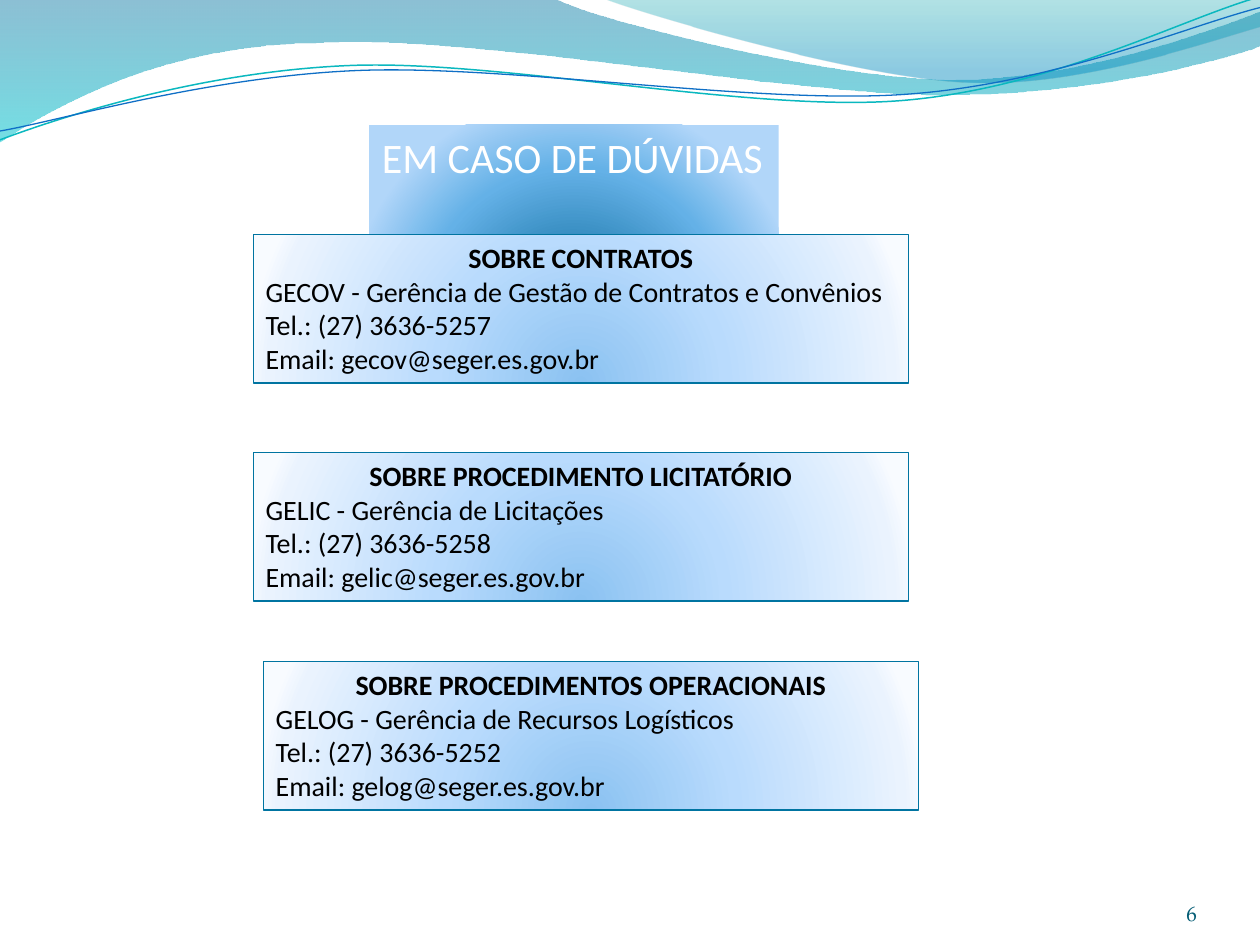
import math
from dataclasses import dataclass

import pptx
import pptx.dml.color
import pptx.enum.shapes
import pptx.enum.text
import pptx.oxml
import pptx.oxml.ns
import pptx.util

RGBColor = pptx.dml.color.RGBColor
Align = pptx.enum.text.PP_ALIGN
Anchor = pptx.enum.text.MSO_ANCHOR

WHITE = RGBColor(0xFF, 0xFF, 0xFF)
BLACK = RGBColor(0x00, 0x00, 0x00)
DEEP_BLUE = RGBColor(0x00, 0x74, 0xA1)
TURQUOISE = RGBColor(0x00, 0xC6, 0xCF)
TEAL = RGBColor(0x00, 0xA1, 0xA9)
OCEAN = RGBColor(0x00, 0x8B, 0xBF)
LINE_TEAL = RGBColor(0x0A, 0xB8, 0xBF)
LINE_BLUE = RGBColor(0x0F, 0x6F, 0xC6)
NUMBER_COLOR = RGBColor(0x04, 0x5D, 0x75)

SLIDE_WIDTH = pptx.util.Inches(10)
SLIDE_HEIGHT = pptx.util.Inches(7.5)
COLUMN = SLIDE_WIDTH / 100
ROW = SLIDE_HEIGHT / 75
LINE_ROTATION = -2.7
FIRST_WAVE_ID = 101


@dataclass(frozen=True)
class Stop:
    position: int
    color: RGBColor
    opacity: int = 100


@dataclass(frozen=True)
class Box:
    column: float
    row: float
    columns: float
    rows: float

    def place(self) -> tuple[int, int, int, int]:
        return (round(self.column * COLUMN), round(self.row * ROW),
                round(self.columns * COLUMN), round(self.rows * ROW))


@dataclass(frozen=True)
class Wave:
    start: tuple[float, float]
    segments: list[tuple[float, ...]]
    stops: tuple[Stop, ...] = ()
    line: RGBColor | None = None
    width: float = 0
    rotation: float = 0
    pivot: tuple[float, float] = (50, 5.8)


@dataclass(frozen=True)
class Contact:
    column: float
    row: float
    heading: str
    department: str
    phone: str
    email: str
    justified_lines: int = 1


TITLE_STOPS = (Stop(0, RGBColor(0x00, 0x60, 0x91)), Stop(68, RGBColor(0x64, 0xB1, 0xE7)),
               Stop(100, RGBColor(0xB1, 0xD6, 0xF9)))
CARD_STOPS = (Stop(0, RGBColor(0x8B, 0xC2, 0xF1)), Stop(43, RGBColor(0xB9, 0xDB, 0xFD)),
              Stop(93, RGBColor(0xEA, 0xF3, 0xFE)), Stop(100, RGBColor(0xF8, 0xFB, 0xFF)))
LINEAR = '<a:lin ang="5400000" scaled="1"/>'
RADIAL = ('<a:path path="circle"><a:fillToRect l="50000" t="130000" r="50000" b="-30000"/>'
          '</a:path>')

WAVES = [
    Wave((0, -0.1), [(44, -0.1), (47.6, 1.7, 66.4, 6.3, 75.8, 6.3),
                     (85.3, 6.3, 95.8, 2.6, 100, 0.9), (100.1, 3.6),
                     (98.3, 4.4, 87, 7.6, 74.6, 7.5), (62.2, 7.5, 38.2, 2.8, 25.7, 3.4),
                     (12.9, 3.5, 4.6, 8.3, -0.1, 11.3)],
         stops=(Stop(0, DEEP_BLUE, 45), Stop(100, TURQUOISE, 55))),
    Wave((47.9, -0.1), [(50.9, 1.1, 68.2, 6.2, 76.9, 6.5),
                        (85.6, 6.9, 96.1, 3.2, 100, 2.1), (100, 0)],
         stops=(Stop(0, TEAL, 30), Stop(80, OCEAN, 45))),
    Wave((0, 11.1), [(4.8, 9.3, 15.8, 5.7, 27.7, 5.2), (39.5, 4.7, 59.3, 8.9, 71.3, 8),
                     (83.3, 7.1, 93.8, 1.5, 99.8, -0.2)],
         line=LINE_TEAL, width=0.85, rotation=LINE_ROTATION, pivot=(49.9, 5.75)),
    Wave((0, 10.4), [(4.7, 9.6, 16.4, 6.1, 28.3, 5.6), (40.3, 5.1, 59.7, 8.3, 71.7, 7.5),
                     (83.6, 6.7, 94.1, 2.1, 100, 0.6)],
         line=LINE_BLUE, width=0.75, rotation=LINE_ROTATION, pivot=(49.95, 5.9)),
]

CONTACTS = [
    Contact(20.1, 18.6, "SOBRE CONTRATOS",
            "GECOV - Gerência de Gestão de Contratos e Convênios",
            "(27) 3636-5257", "gecov@seger.es.gov.br"),
    Contact(20.1, 35.9, "SOBRE PROCEDIMENTO LICITATÓRIO", "GELIC - Gerência de Licitações",
            "(27) 3636-5258", "gelic@seger.es.gov.br", justified_lines=3),
    Contact(20.9, 52.5, "SOBRE PROCEDIMENTOS OPERACIONAIS",
            "GELOG - Gerência de Recursos Logísticos",
            "(27) 3636-5252", "gelog@seger.es.gov.br"),
]


def set_gradient(shape, stops: tuple[Stop, ...], direction: str) -> None:
    shape.fill.solid()
    marks = ""
    for stop in stops:
        alpha = f'<a:alpha val="{stop.opacity * 1000}"/>' if stop.opacity < 100 else ""
        marks += (f'<a:gs pos="{stop.position * 1000}">'
                  f'<a:srgbClr val="{stop.color}">{alpha}</a:srgbClr></a:gs>')
    gradient = pptx.oxml.parse_xml(
        f'<a:gradFill {pptx.oxml.ns.nsdecls("a")} rotWithShape="1">'
        f'<a:gsLst>{marks}</a:gsLst>{direction}</a:gradFill>')
    properties = shape.element.spPr
    properties.replace(properties.find(pptx.oxml.ns.qn("a:solidFill")), gradient)


def set_font(paragraph, name: str, size: float, color: RGBColor, bold: bool = False) -> None:
    paragraph.font.name = name
    paragraph.font.size = pptx.util.Pt(size)
    paragraph.font.color.rgb = color
    paragraph.font.bold = bold


def outline_points(wave: Wave) -> list[tuple[int, int]]:
    points = [wave.start]
    for segment in wave.segments:
        points.extend(zip(segment[::2], segment[1::2]))
    cosine = math.cos(math.radians(-wave.rotation))
    sine = math.sin(math.radians(-wave.rotation))
    pivot_x, pivot_y = wave.pivot
    return [(round((pivot_x + (x - pivot_x) * cosine - (y - pivot_y) * sine) * COLUMN),
             round((pivot_y + (x - pivot_x) * sine + (y - pivot_y) * cosine) * ROW))
            for x, y in points]


def bend(shape, segments: list[tuple[float, ...]]) -> None:
    steps = iter(list(shape.element.iter(pptx.oxml.ns.qn("a:lnTo"))))
    for segment in segments:
        first = next(steps)
        if len(segment) == 2:
            continue
        curve = pptx.oxml.parse_xml(f'<a:cubicBezTo {pptx.oxml.ns.nsdecls("a")}/>')
        first.addprevious(curve)
        for step in (first, next(steps), next(steps)):
            curve.append(step[0])
            step.getparent().remove(step)


def draw_wave(slide, master, wave: Wave, identifier: int) -> None:
    points = outline_points(wave)
    builder = slide.shapes.build_freeform(*points[0])
    builder.add_line_segments(points[1:], close=bool(wave.stops))
    shape = builder.convert_to_shape()
    bend(shape, wave.segments)
    shape.rotation = wave.rotation
    shape.shadow.inherit = False
    if wave.stops:
        set_gradient(shape, wave.stops, LINEAR)
        shape.line.fill.background()
    else:
        shape.fill.background()
        shape.line.color.rgb = wave.line
        shape.line.width = pptx.util.Pt(wave.width)
    shape.element.nvSpPr.cNvPr.set("id", str(identifier))
    master.shapes.element.append(shape.element)


def draw_title(slide, text: str, box: Box) -> None:
    title = slide.shapes.title
    title.left, title.top, title.width, title.height = box.place()
    set_gradient(title, TITLE_STOPS, RADIAL)
    frame = title.text_frame
    frame.text = text
    frame.word_wrap = False
    frame.auto_size = pptx.enum.text.MSO_AUTO_SIZE.SHAPE_TO_FIT_TEXT
    frame.vertical_anchor = Anchor.TOP
    frame.paragraphs[0].alignment = Align.LEFT
    set_font(frame.paragraphs[0], "Calibri", 24, WHITE)


def draw_contact(slide, contact: Contact) -> None:
    box = Box(contact.column, contact.row, 52, 11.8)
    card = slide.shapes.add_shape(pptx.enum.shapes.MSO_SHAPE.RECTANGLE, *box.place())
    card.shadow.inherit = False
    set_gradient(card, CARD_STOPS, RADIAL)
    card.line.color.rgb = DEEP_BLUE
    card.line.width = pptx.util.Pt(0.75)
    frame = card.text_frame
    frame.word_wrap = True
    frame.auto_size = pptx.enum.text.MSO_AUTO_SIZE.SHAPE_TO_FIT_TEXT
    frame.vertical_anchor = Anchor.TOP
    frame.text = "\n".join([contact.heading, contact.department,
                            f"Tel.: {contact.phone}", f"Email: {contact.email}"])
    heading, *lines = frame.paragraphs
    heading.alignment = Align.CENTER
    set_font(heading, "Calibri", 16, BLACK, bold=True)
    for index, paragraph in enumerate(lines):
        paragraph.alignment = Align.JUSTIFY if index < contact.justified_lines else Align.LEFT
        set_font(paragraph, "Calibri", 16, BLACK)


def draw_number(slide, text: str, box: Box) -> None:
    frame = slide.shapes.add_textbox(*box.place()).text_frame
    frame.word_wrap = True
    frame.margin_left = frame.margin_right = frame.margin_top = frame.margin_bottom = 0
    frame.vertical_anchor = Anchor.BOTTOM
    frame.text = text
    frame.paragraphs[0].alignment = Align.RIGHT
    set_font(frame.paragraphs[0], "TeX Gyre Pagella", 12, NUMBER_COLOR)


def main() -> None:
    presentation = pptx.Presentation()
    presentation.slide_width, presentation.slide_height = SLIDE_WIDTH, SLIDE_HEIGHT
    slide = presentation.slides.add_slide(presentation.slide_layouts.get_by_name("Title Only"))
    for identifier, wave in enumerate(WAVES, FIRST_WAVE_ID):
        draw_wave(slide, presentation.slide_master, wave, identifier)
    draw_title(slide, "EM CASO DE DÚVIDAS", Box(29.3, 9.9, 32.5, 5))
    for contact in CONTACTS:
        draw_contact(slide, contact)
    draw_number(slide, "6", Box(86.7, 69.5, 8.3, 4))
    presentation.save("out.pptx")


if __name__ == "__main__":
    main()
